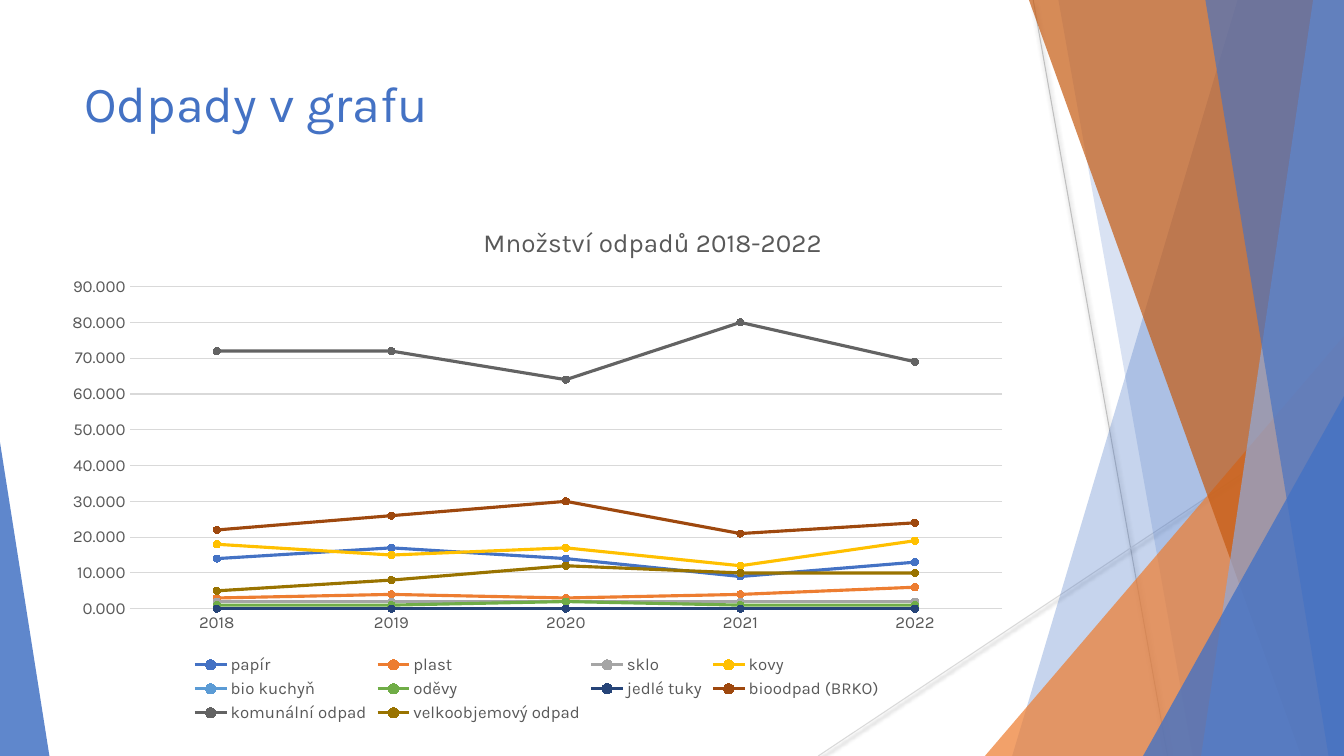
from pptx import Presentation
from pptx.chart.data import CategoryChartData
from pptx.dml.color import RGBColor
from pptx.enum.chart import XL_CHART_TYPE as ChartType, XL_LEGEND_POSITION as LegendPos
from pptx.enum.chart import XL_MARKER_STYLE as Marker, XL_TICK_MARK as TickMark
from pptx.enum.shapes import MSO_CONNECTOR as Connector, MSO_SHAPE as Shape
from pptx.enum.text import MSO_ANCHOR as Anchor, PP_ALIGN as Align
from pptx.oxml import parse_xml
from pptx.oxml.ns import nsdecls
from pptx.util import Pt

FONT = "Karla"
COLOURS = {
    "blue": "4472C4", "orange": "ED7D31", "rust": "C55A11", "pale blue": "8FAADC",
    "grey line": "BFBFBF", "light line": "D9D9D9", "text": "595959",
    "papír": "4472C4", "plast": "ED7D31", "sklo": "A5A5A5", "kovy": "FFC000",
    "bio kuchyň": "5B9BD5", "oděvy": "70AD47", "jedlé tuky": "264478",
    "bioodpad (BRKO)": "9E480E", "komunální odpad": "636363",
    "velkoobjemový odpad": "997300",
}
WIDTH, HEIGHT = 960, 540


def rgb(name):
    return RGBColor.from_string(COLOURS[name])


def paint(shape, colour, opacity):
    """Fill a shape with a see-through colour, without outline or shadow."""
    shape.shadow.inherit = False
    shape.line.fill.background()
    shape.fill.solid()
    shape.fill.fore_color.rgb = rgb(colour)
    colour_xml = shape.fill._xPr.solidFill[0]
    colour_xml.append(parse_xml(f'<a:alpha {nsdecls("a")} val="{opacity * 1000}"/>'))


prs = Presentation()
prs.slide_width, prs.slide_height = Pt(WIDTH), Pt(HEIGHT)
slide = prs.slides.add_slide(prs.slide_layouts[5])
shapes = slide.shapes

# Thin crossing lines with a soft shadow
for x1, y1, x2, y2, colour in [
    (738, 0, 834, HEIGHT, "grey line"),
    (WIDTH, 290, 584.5, HEIGHT, "light line"),
]:
    ray = shapes.add_connector(Connector.STRAIGHT, Pt(x1), Pt(y1), Pt(x2), Pt(y2))
    ray.line.color.rgb = rgb(colour)
    ray.line.width = Pt(0.75)
    ray._element.spPr.append(parse_xml(
        f'<a:effectLst {nsdecls("a")}><a:outerShdw blurRad="{Pt(3.1)}" dist="{Pt(1.6)}" '
        'dir="5400000" rotWithShape="0"><a:srgbClr val="000000"><a:alpha val="38000"/>'
        '</a:srgbClr></a:outerShdw></a:effectLst>'))

# Bands reach the right edge: (top x, bottom x, colour, opacity)
# Corners are right triangles: (left, top, width, square corner, colour, opacity)
facets = [
    (884, 723, "blue", 30),
    (756, 852, "blue", 20),
    (703.5, 240, 256.5, 1, "orange", 72),
    (735, 929.5, "rust", 70),
    (938, 858, "pale blue", 70),
    (861, 949, "blue", 65),
    (816.5, 283, 143.5, 1, "blue", 80),
    (0, 316, 35.3, 0, "blue", 85),
]
for *place, colour, opacity in facets:
    if len(place) == 2:
        top_x, bottom_x = place
        outline = shapes.build_freeform(Pt(top_x), Pt(0))
        outline.add_line_segments(
            [(Pt(WIDTH), Pt(0)), (Pt(WIDTH), Pt(HEIGHT)), (Pt(bottom_x), Pt(HEIGHT))])
        facet = outline.convert_to_shape()
    else:
        left, top, width, corner = place
        facet = shapes.add_shape(
            Shape.ISOSCELES_TRIANGLE, Pt(left), Pt(top), Pt(width), Pt(HEIGHT - top))
        facet.adjustments[0] = corner
    paint(facet, colour, opacity)

heading = shapes.title
heading.left, heading.top, heading.width, heading.height = Pt(53), Pt(48), Pt(677), Pt(104)
heading.text_frame.text = "Odpady v grafu"
heading.text_frame.vertical_anchor = Anchor.TOP
heading.text_frame.margin_top = Pt(3.6)
heading_line = heading.text_frame.paragraphs[0]
heading_line.alignment = Align.LEFT
heading_font = heading_line.runs[0].font
heading_font.name, heading_font.size = FONT, Pt(36)
heading_font.color.rgb = rgb("blue")

waste = CategoryChartData(number_format="0.000")
waste.categories = ["2018", "2019", "2020", "2021", "2022"]
for kind, amounts in {
    "papír": (14, 17, 14, 9, 13),
    "plast": (3, 4, 3, 4, 6),
    "sklo": (2, 2, 2, 2, 2),
    "kovy": (18, 15, 17, 12, 19),
    "bio kuchyň": (0, 0, 0, 0, 0),
    "oděvy": (1, 1, 2, 1, 1),
    "jedlé tuky": (0, 0, 0, 0, 0),
    "bioodpad (BRKO)": (22, 26, 30, 21, 24),
    "komunální odpad": (72, 72, 64, 80, 69),
    "velkoobjemový odpad": (5, 8, 12, 10, 10),
}.items():
    waste.add_series(kind, amounts)

chart = shapes.add_chart(
    ChartType.LINE_MARKERS, Pt(37.2), Pt(146.2), Pt(692.6), Pt(373), waste).chart
chart.font.name, chart.font.size = FONT, Pt(12)
chart.font.color.rgb = rgb("text")

chart.has_title = True
chart.chart_title.include_in_layout = False
chart.chart_title.text_frame.text = "Množství odpadů 2018-2022"
title_font = chart.chart_title.text_frame.paragraphs[0].runs[0].font
title_font.name, title_font.size, title_font.bold = FONT, Pt(18.6), False
title_font.color.rgb = rgb("text")

chart.has_legend = True
chart.legend.position = LegendPos.BOTTOM
chart.legend.include_in_layout = False
chart.legend.font.name, chart.legend.font.size = FONT, Pt(12)
chart.legend.font.color.rgb = rgb("text")

years, tonnes = chart.category_axis, chart.value_axis
for axis in (years, tonnes):
    axis.major_tick_mark = axis.minor_tick_mark = TickMark.NONE
    axis.tick_labels.font.name, axis.tick_labels.font.size = FONT, Pt(12)
    axis.tick_labels.font.color.rgb = rgb("text")
tonnes.minimum_scale, tonnes.maximum_scale, tonnes.major_unit = 0, 90, 10
tonnes.tick_labels.number_format = "0.000"
tonnes.tick_labels.number_format_is_linked = False
tonnes.format.line.fill.background()
for rule in (years.format.line, tonnes.major_gridlines.format.line):
    rule.color.rgb = rgb("light line")
    rule.width = Pt(0.75)

plot = chart.plots[0]
plot.vary_by_categories = False
for series in plot.series:
    series.smooth = False
    series.format.line.color.rgb = rgb(series.name)
    series.format.line.width = Pt(2.25)
    series.marker.style, series.marker.size = Marker.CIRCLE, 5
    series.marker.format.fill.solid()
    series.marker.format.fill.fore_color.rgb = rgb(series.name)
    series.marker.format.line.color.rgb = rgb(series.name)

# Place the chart title and the plot area as fractions of the chart
chart_xml = chart._chartSpace.chart
for part, index, target, places in [
    (chart_xml.find("{*}title"), 1, "", {"x": 0.44, "y": 0.03}),
    (chart_xml.plotArea, 0, '<c:layoutTarget val="inner"/>',
     {"x": 0.08, "y": 0.157, "w": 0.9, "h": 0.617}),
]:
    for old_layout in part.findall("{*}layout"):
        part.remove(old_layout)
    sizes = "".join(f'<c:{side} val="{share}"/>' for side, share in places.items())
    part.insert(index, parse_xml(
        f'<c:layout {nsdecls("c")}><c:manualLayout>{target}<c:xMode val="edge"/>'
        f'<c:yMode val="edge"/>{sizes}</c:manualLayout></c:layout>'))

prs.save("out.pptx")
